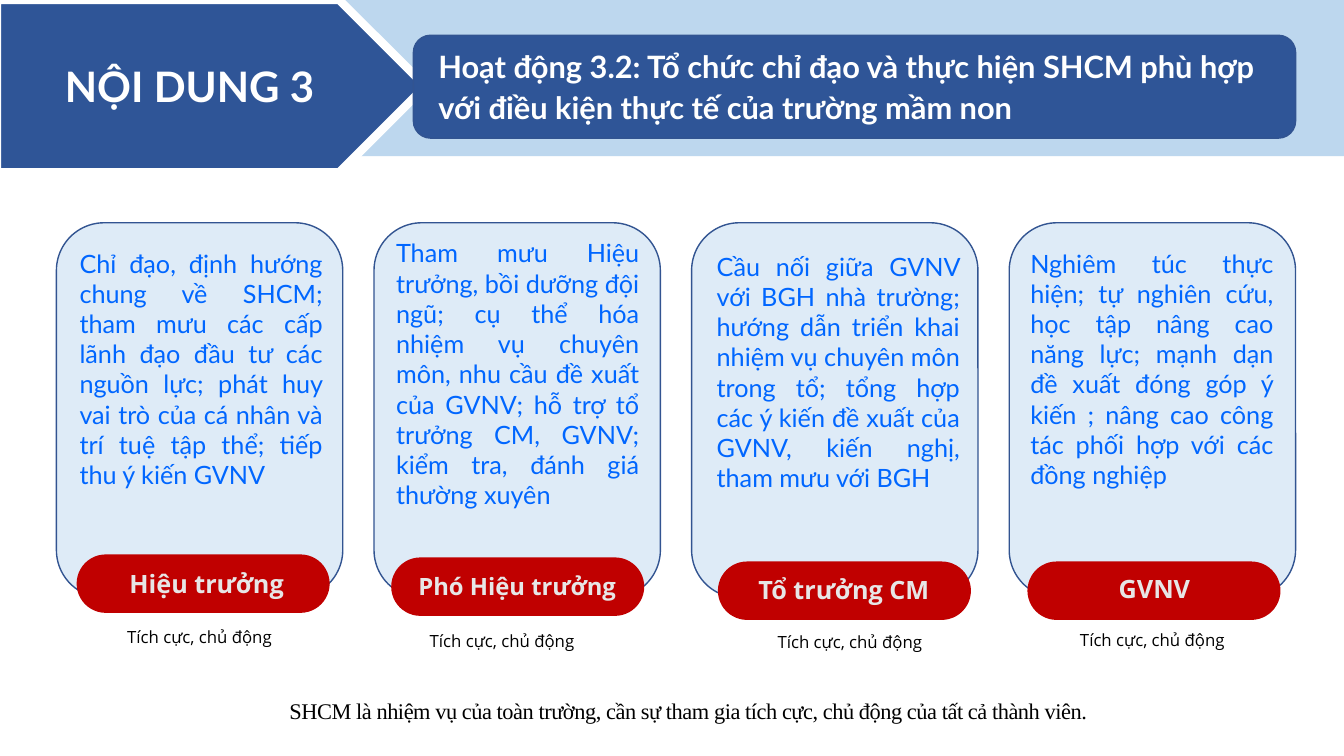
from pptx import Presentation
from pptx.dml.color import RGBColor
from pptx.enum.shapes import MSO_SHAPE
from pptx.enum.text import MSO_ANCHOR, MSO_AUTO_SIZE, PP_ALIGN
from pptx.util import Inches, Pt

CARD = MSO_SHAPE.FLOWCHART_ALTERNATE_PROCESS
BAND = MSO_SHAPE.RECTANGLE
ROUNDED = MSO_SHAPE.ROUNDED_RECTANGLE
ARROW = MSO_SHAPE.PENTAGON
LEFT, CENTER, JUSTIFY = PP_ALIGN.LEFT, PP_ALIGN.CENTER, PP_ALIGN.JUSTIFY
TOP, MIDDLE = MSO_ANCHOR.TOP, MSO_ANCHOR.MIDDLE
GROW, FIXED = MSO_AUTO_SIZE.SHAPE_TO_FIT_TEXT, MSO_AUTO_SIZE.NONE

COLORS = {
    "white": "FFFFFF",
    "black": "000000",
    "navy": "2F5597",
    "outline": "325491",
    "band": "BDD7EE",
    "card": "DEEBF7",
    "body": "0066FF",
    "red": "C00000",
    "label": "E7E6E6",
}

SLIDE_WIDTH, SLIDE_HEIGHT = 13.33, 7.5
COLUMN_LEFT, COLUMN_PITCH = 0.56, 3.15
CARD_TOP, CARD_WIDTH, CARD_HEIGHT = 2.21, 2.84, 3.72
BODY_WIDTH = 2.61
PILL_WIDTH, PILL_HEIGHT = 2.51, 0.58
LABEL_WIDTH, LABEL_HEIGHT = 2.18, 0.4
CAPTION_WIDTH, CAPTION_HEIGHT = 1.76, 0.3
CAPTION = "Tích cực, chủ động"

ROLES = [
    {
        "name": "Hiệu trưởng",
        "duty": "Chỉ đạo, định hướng chung về SHCM; tham mưu các cấp lãnh đạo đầu tư "
                "các nguồn lực; phát huy vai trò của cá nhân và trí tuệ tập thể; "
                "tiếp thu ý kiến GVNV",
        "body": (0.13, 2.41, 2.83), "pill": (0.2, 5.5),
        "label": (0.4, 5.59, 18), "caption": (0.54, 6.17),
    },
    {
        "name": "Phó Hiệu trưởng",
        "duty": "Tham mưu Hiệu trưởng, bồi dưỡng đội ngũ; cụ thể hóa nhiệm vụ chuyên "
                "môn, nhu cầu đề xuất của GVNV; hỗ trợ tổ trưởng CM, GVNV; kiểm tra, "
                "đánh giá thường xuyên",
        "body": (0.12, 2.31, 3.13), "pill": (0.17, 5.53),
        "label": (0.33, 5.62, 17), "caption": (0.39, 6.21),
    },
    {
        "name": "Tổ trưởng CM",
        "duty": "Cầu nối giữa GVNV với BGH nhà trường; hướng dẫn triển khai nhiệm vụ "
                "chuyên môn trong tổ; tổng hợp các ý kiến đề xuất của GVNV, kiến nghị, "
                "tham mưu với BGH",
        "body": (0.15, 2.44, 2.83), "pill": (0.26, 5.57),
        "label": (0.42, 5.65, 18), "caption": (0.69, 6.22),
    },
    {
        "name": "GVNV",
        "duty": "Nghiêm túc thực hiện; tự nghiên cứu, học tập nâng cao năng lực; mạnh "
                "dạn đề xuất đóng góp ý kiến ; nâng cao công tác phối hợp với các "
                "đồng nghiệp",
        "body": (0.11, 2.41, 2.83), "pill": (0.18, 5.57),
        "label": (0.35, 5.64, 18), "caption": (0.54, 6.2),
    },
]


def color(name):
    return RGBColor.from_string(COLORS[name])


def write(shape, text, font="Lato", size=18, fill="black", bold=False, align=CENTER,
          anchor=TOP, line_spacing=None, tracking=None, autosize=GROW):
    frame = shape.text_frame
    frame.word_wrap = True
    frame.auto_size = autosize
    frame.vertical_anchor = anchor
    paragraph = frame.paragraphs[0]
    paragraph.alignment = align
    if line_spacing:
        paragraph.line_spacing = line_spacing
    run = paragraph.add_run()
    run.text = text
    run.font.name = font
    run.font.size = Pt(size)
    run.font.bold = bold
    run.font.color.rgb = color(fill)
    if tracking:
        run._r.get_or_add_rPr().set("spc", str(round(tracking * 100)))


def add_text(slide, box, text, **text_format):
    shape = slide.shapes.add_textbox(*map(Inches, box))
    write(shape, text, **text_format)


def add_block(slide, preset, box, fill, line=None, line_width=1, rounding=None):
    shape = slide.shapes.add_shape(preset, *map(Inches, box))
    shape.shadow.inherit = False
    shape.fill.solid()
    shape.fill.fore_color.rgb = color(fill)
    if line:
        shape.line.color.rgb = color(line)
        shape.line.width = Pt(line_width)
    else:
        shape.line.fill.background()
    if rounding is not None:
        shape.adjustments[0] = rounding
    return shape


def add_header(slide):
    add_block(slide, BAND, (0, 0, SLIDE_WIDTH, 1.55), "band")
    arrow = add_block(slide, ARROW, (-0.03, 0, 4.25, 1.71), "navy", "white", 6)
    write(arrow, "NỘI DUNG 3", size=30, fill="white", bold=True, anchor=MIDDLE,
          autosize=FIXED)
    add_block(slide, ROUNDED, (4.1, 0.35, 8.75, 1.02), "navy", "outline")
    add_text(slide, (4.25, 0.39, 8.46, 0.9),
             "Hoạt động 3.2: Tổ chức chỉ đạo và thực hiện SHCM phù hợp với điều kiện "
             "thực tế của trường mầm non",
             size=22, fill="white", bold=True, align=LEFT, line_spacing=1.1,
             autosize=FIXED)


def add_role(slide, column, role):
    left = COLUMN_LEFT + column * COLUMN_PITCH
    add_block(slide, CARD, (left, CARD_TOP, CARD_WIDTH, CARD_HEIGHT), "card", "outline")
    shift, top, height = role["body"]
    add_text(slide, (left + shift, top, BODY_WIDTH, height), role["duty"],
             fill="body", align=JUSTIFY)
    shift, top = role["pill"]
    add_block(slide, ROUNDED, (left + shift, top, PILL_WIDTH, PILL_HEIGHT), "red",
              rounding=0.5)
    shift, top, size = role["label"]
    add_text(slide, (left + shift, top, LABEL_WIDTH, LABEL_HEIGHT), role["name"],
             font="Open Sans", size=size, fill="label", bold=True)
    shift, top = role["caption"]
    add_text(slide, (left + shift, top, CAPTION_WIDTH, CAPTION_HEIGHT), CAPTION,
             font="Open Sans", size=12)


def main():
    presentation = Presentation()
    presentation.slide_width = Inches(SLIDE_WIDTH)
    presentation.slide_height = Inches(SLIDE_HEIGHT)
    slide = presentation.slides.add_slide(presentation.slide_layouts[6])
    add_header(slide)
    for column, role in enumerate(ROLES):
        add_role(slide, column, role)
    add_text(slide, (1.55, 6.76, 10.56, 0.45),
             "SHCM là nhiệm vụ của toàn trường, cần sự tham gia tích cực, chủ động "
             "của tất cả thành viên.",
             font="Times New Roman", size=16, anchor=MIDDLE, line_spacing=1.5,
             tracking=-0.3)
    presentation.save("out.pptx")


if __name__ == "__main__":
    main()
